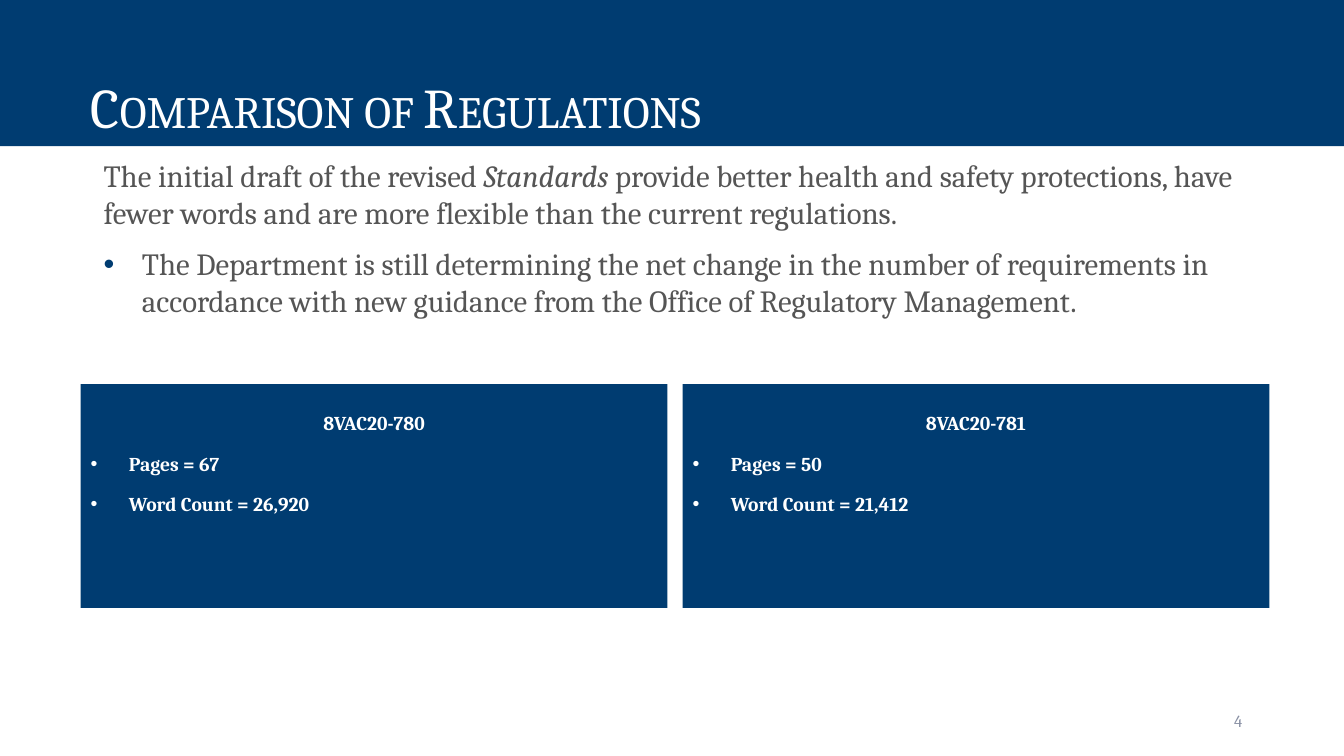
from lxml.etree import SubElement
from pptx import Presentation
from pptx.dml.color import RGBColor
from pptx.enum.shapes import MSO_SHAPE as Shape
from pptx.enum.text import MSO_ANCHOR as Anchor, MSO_AUTO_SIZE as AutoSize, PP_ALIGN as Align
from pptx.oxml.ns import qn
from pptx.util import Inches, Pt

WIDTH, HEIGHT = 13.33, 7.5
CARD_LEFT, CARD_TOP, CARD_WIDTH, CARD_HEIGHT, CARD_GAP = 0.8, 3.81, 5.82, 2.22, 0.15
INDENT = 0.38
NAVY, WHITE, TEXT_GRAY, NUMBER_GRAY = "003C71", "FFFFFF", "555555", "888FA3"

INTRO = [
    ("The initial draft of the revised ", False),
    ("Standards", True),
    (" provide better health and safety protections, have fewer words "
     "and are more flexible than the current regulations.", False),
]
GUIDANCE = [
    ("The Department is still determining the net change in the number of requirements "
     "in accordance with new guidance from the Office of Regulatory Management.", False),
]
REGULATIONS = [
    ("8VAC20-780", "67", "26,920"),
    ("8VAC20-781", "50", "21,412"),
]


def color(value):
    return RGBColor.from_string(value)


class SlideBuilder:
    font_name = "Cambria"

    def __init__(self, presentation):
        self.slide = presentation.slides.add_slide(presentation.slide_layouts[5])

    def fill(self, shape, value):
        shape.fill.solid()
        shape.fill.fore_color.rgb = color(value)

    def frame(self, shape, anchor, left=0.1, top=0.05):
        frame = shape.text_frame
        frame.word_wrap = True
        frame.auto_size = AutoSize.NONE
        frame.vertical_anchor = anchor
        frame.margin_left, frame.margin_right = Inches(left), Inches(0.1)
        frame.margin_top, frame.margin_bottom = Inches(top), Inches(0.05)
        return frame

    def paragraph(self, frame, runs, size, text_color, bold=False,
                  align=Align.LEFT, before=0, after=0, bullet=None):
        """Write (text, italic) runs; bullet is the colour of the bullet, if any."""
        paragraph = frame.paragraphs[0]
        if paragraph.runs:
            paragraph = frame.add_paragraph()
        if bullet:
            self.bullet(paragraph, bullet)
        paragraph.alignment = align
        paragraph.space_before, paragraph.space_after = Pt(before), Pt(after)
        font = paragraph.font
        font.name, font.size, font.bold = self.font_name, Pt(size), bold
        font.color.rgb = color(text_color)
        for text, italic in runs:
            run = paragraph.add_run()
            run.text = text
            if italic:
                run.font.italic = True
        return paragraph

    def bullet(self, paragraph, value):
        properties = paragraph._p.get_or_add_pPr()
        properties.set("marL", str(Inches(INDENT)))
        properties.set("indent", str(-Inches(INDENT)))
        bullet_color = SubElement(properties, qn("a:buClr"))
        SubElement(bullet_color, qn("a:srgbClr"), val=value)
        SubElement(properties, qn("a:buFont"), typeface="Arial")
        SubElement(properties, qn("a:buChar"), char="•")

    def title(self, text, height):
        title = self.slide.shapes.title
        title.left, title.top = 0, 0
        title.width, title.height = Inches(WIDTH), Inches(height)
        self.fill(title, NAVY)
        frame = self.frame(title, Anchor.BOTTOM, left=0.9)
        paragraph = self.paragraph(frame, [(text, False)], 40, WHITE)
        paragraph.line_spacing = 0.9
        paragraph._p.pPr.get_or_add_defRPr().set("cap", "small")

    def text_box(self, left, top, width, height, anchor=Anchor.TOP):
        box = self.slide.shapes.add_textbox(*map(Inches, (left, top, width, height)))
        return self.frame(box, anchor)

    def card(self, column, name, pages, words):
        left = CARD_LEFT + column * (CARD_WIDTH + CARD_GAP)
        card = self.slide.shapes.add_shape(
            Shape.RECTANGLE, *map(Inches, (left, CARD_TOP, CARD_WIDTH, CARD_HEIGHT)))
        card.shadow.inherit = False
        self.fill(card, NAVY)
        card.line.fill.background()
        frame = self.frame(card, Anchor.TOP, top=0.27)
        self.paragraph(frame, [(name, False)], 14, WHITE, bold=True,
                       align=Align.CENTER, after=12)
        for fact in (f"Pages = {pages}", f"Word Count = {words}"):
            self.paragraph(frame, [(fact, False)], 14, WHITE, bold=True,
                           after=12, bullet=WHITE)


def main():
    presentation = Presentation()
    presentation.slide_width, presentation.slide_height = Inches(WIDTH), Inches(HEIGHT)
    builder = SlideBuilder(presentation)
    builder.title("Comparison of Regulations", 1.45)

    number = builder.text_box(9.42, 6.95, 3, 0.4, Anchor.MIDDLE)
    builder.paragraph(number, [("4", False)], 12, NUMBER_GRAY, align=Align.RIGHT)

    body = builder.text_box(0.93, 1.51, 11.5, 5.66)
    builder.paragraph(body, INTRO, 22, TEXT_GRAY, before=10)
    builder.paragraph(body, GUIDANCE, 22, TEXT_GRAY, before=10, bullet=NAVY)

    for column, regulation in enumerate(REGULATIONS):
        builder.card(column, *regulation)
    presentation.save("out.pptx")


if __name__ == "__main__":
    main()
